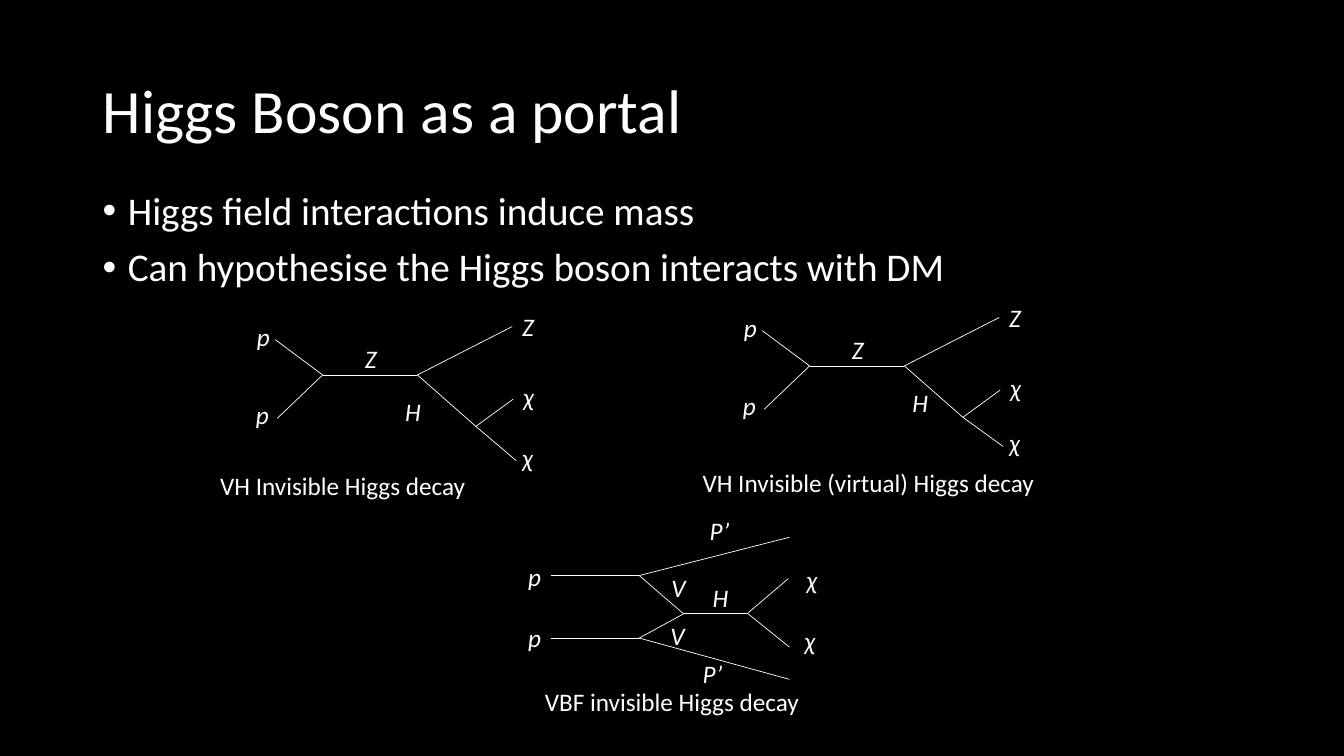
from dataclasses import dataclass

from lxml import etree
from pptx import Presentation
from pptx.dml.color import RGBColor
from pptx.enum.text import MSO_ANCHOR, MSO_AUTO_SIZE, PP_ALIGN
from pptx.enum.shapes import MSO_CONNECTOR
from pptx.oxml.ns import qn
from pptx.shapes.autoshape import Shape
from pptx.slide import Slide
from pptx.text.text import TextFrame
from pptx.util import Emu, Pt

LEFT, CENTER = PP_ALIGN.LEFT, PP_ALIGN.CENTER
MIDDLE, TOP = MSO_ANCHOR.MIDDLE, MSO_ANCHOR.TOP
FIT_SHAPE, NO_FIT = MSO_AUTO_SIZE.SHAPE_TO_FIT_TEXT, MSO_AUTO_SIZE.NONE
STRAIGHT = MSO_CONNECTOR.STRAIGHT

EMU_PER_PX = 9144  # 100 px to the inch
LABEL_HEIGHT = 40
TITLE_ONLY_LAYOUT = 5


@dataclass(frozen=True)
class Theme:
    background: RGBColor = RGBColor(0x00, 0x00, 0x00)
    ink: RGBColor = RGBColor(0xFF, 0xFF, 0xFF)
    font: str = "Calibri"
    title_size: int = 44
    bullet_size: int = 28
    label_size: int = 18
    line_width: float = 0.5


@dataclass(frozen=True)
class Label:
    text: str
    left: int
    top: int
    width: int = 30


@dataclass(frozen=True)
class Caption:
    text: str
    left: int
    top: int
    width: int
    alignment: PP_ALIGN = CENTER


@dataclass(frozen=True)
class Diagram:
    lines: list[tuple[int, int, int, int]]
    labels: list[Label]
    caption: Caption
    left: int = 0
    top: int = 0


THEME = Theme()


def px(length: int) -> Emu:
    return Emu(length * EMU_PER_PX)


def format_text(frame: TextFrame, size: int, italic: bool = False) -> None:
    for paragraph in frame.paragraphs:
        for run in paragraph.runs:
            run.font.name = THEME.font
            run.font.size = Pt(size)
            run.font.italic = italic
            run.font.color.rgb = THEME.ink


def place(shape: Shape, left: int, top: int, width: int, height: int) -> None:
    shape.left, shape.top = px(left), px(top)
    shape.width, shape.height = px(width), px(height)


def add_title(slide: Slide, text: str) -> None:
    title = slide.shapes.title
    place(title, 92, 40, 1150, 145)
    frame = title.text_frame
    frame.text = text
    frame.auto_size = NO_FIT
    frame.vertical_anchor = MIDDLE
    frame.paragraphs[0].alignment = LEFT
    frame.paragraphs[0].line_spacing = 0.9
    format_text(frame, THEME.title_size)


def add_bullets(slide: Slide, items: list[str]) -> None:
    box = slide.shapes.add_textbox(px(92), px(185), px(1150), px(476))
    frame = box.text_frame
    frame.word_wrap = True
    frame.vertical_anchor = TOP
    frame.text = "\n".join(items)
    for index, paragraph in enumerate(frame.paragraphs):
        paragraph.line_spacing = 0.9
        paragraph.space_before = Pt(10 if index else 0)
        properties = paragraph._p.get_or_add_pPr()
        properties.set("marL", str(px(25)))
        properties.set("indent", str(px(-25)))
        font = etree.SubElement(properties, qn("a:buFont"))
        font.set("typeface", "Arial")
        bullet = etree.SubElement(properties, qn("a:buChar"))
        bullet.set("char", "•")
    format_text(frame, THEME.bullet_size)


def add_text(shapes, text: str, left: int, top: int, width: int,
             alignment: PP_ALIGN = LEFT, italic: bool = False) -> None:
    box = shapes.add_textbox(px(left), px(top), px(width), px(LABEL_HEIGHT))
    frame = box.text_frame
    frame.word_wrap = True
    frame.auto_size = FIT_SHAPE
    frame.text = text
    frame.paragraphs[0].alignment = alignment
    format_text(frame, THEME.label_size, italic)


def add_line(shapes, x1: int, y1: int, x2: int, y2: int) -> None:
    line = shapes.add_connector(STRAIGHT, px(x1), px(y1), px(x2), px(y2))
    line.line.color.rgb = THEME.ink
    line.line.width = Pt(THEME.line_width)
    etree.SubElement(line._element.spPr, qn("a:effectLst"))


def add_diagram(slide: Slide, diagram: Diagram) -> None:
    left, top = diagram.left, diagram.top
    shapes = slide.shapes.add_group_shape().shapes
    for x1, y1, x2, y2 in diagram.lines:
        add_line(shapes, left + x1, top + y1, left + x2, top + y2)
    for label in diagram.labels:
        add_text(shapes, label.text, left + label.left, top + label.top,
                 label.width, italic=True)
    caption = diagram.caption
    add_text(slide.shapes, caption.text, caption.left, caption.top,
             caption.width, caption.alignment)


def vh_diagram(caption: Caption, h_left: int, chi_end: int, chi_top: int,
               left: int = 0, top: int = 0) -> Diagram:
    """Two protons to Z, then Z and H, with H to a pair of χ."""
    lines = [
        (273, 337, 320, 372), (275, 415, 320, 372),
        (320, 372, 414, 372), (414, 372, 508, 324),
        (414, 372, 472, 423), (472, 423, 509, 396),
        (472, 423, 512, chi_end),
    ]
    labels = [
        Label("p", 245, 314), Label("p", 244, 391),
        Label("Z", 352, 336), Label("Z", 508, 304),
        Label("H", h_left, 388),
        Label("χ", 509, 373), Label("χ", 508, chi_top),
    ]
    return Diagram(lines, labels, caption, left, top)


# Diagram content
VH_DECAY = vh_diagram(
    Caption("VH Invisible Higgs decay", 163, 462, 354),
    h_left=392, chi_end=457, chi_top=434)
VH_VIRTUAL_DECAY = vh_diagram(
    Caption("VH Invisible (virtual) Higgs decay", 687, 459, 366, LEFT),
    h_left=412, chi_end=452, chi_top=428, left=483, top=-9)
VBF_DECAY = Diagram(
    lines=[
        (547, 571, 634, 571), (547, 633, 634, 633),
        (634, 571, 783, 533), (634, 633, 783, 674),
        (634, 571, 678, 609), (634, 633, 678, 609),
        (678, 609, 742, 609),
        (742, 608, 782, 574), (742, 609, 783, 642),
    ],
    labels=[
        Label("p", 514, 552), Label("p", 514, 612),
        Label("P’", 694, 506, 47), Label("P’", 687, 648, 50),
        Label("V", 656, 563), Label("V", 655, 610),
        Label("H", 697, 573),
        Label("χ", 790, 555), Label("χ", 788, 615),
    ],
    caption=Caption("VBF invisible Higgs decay", 463, 676, 407))


def main() -> None:
    presentation = Presentation()
    presentation.slide_width, presentation.slide_height = px(1333), px(750)
    layout = presentation.slide_layouts[TITLE_ONLY_LAYOUT]
    slide = presentation.slides.add_slide(layout)
    slide.background.fill.solid()
    slide.background.fill.fore_color.rgb = THEME.background

    add_title(slide, "Higgs Boson as a portal")
    add_bullets(slide, [
        "Higgs field interactions induce mass",
        "Can hypothesise the Higgs boson interacts with DM",
    ])
    for diagram in (VH_DECAY, VH_VIRTUAL_DECAY, VBF_DECAY):
        add_diagram(slide, diagram)
    presentation.save("out.pptx")


if __name__ == "__main__":
    main()
